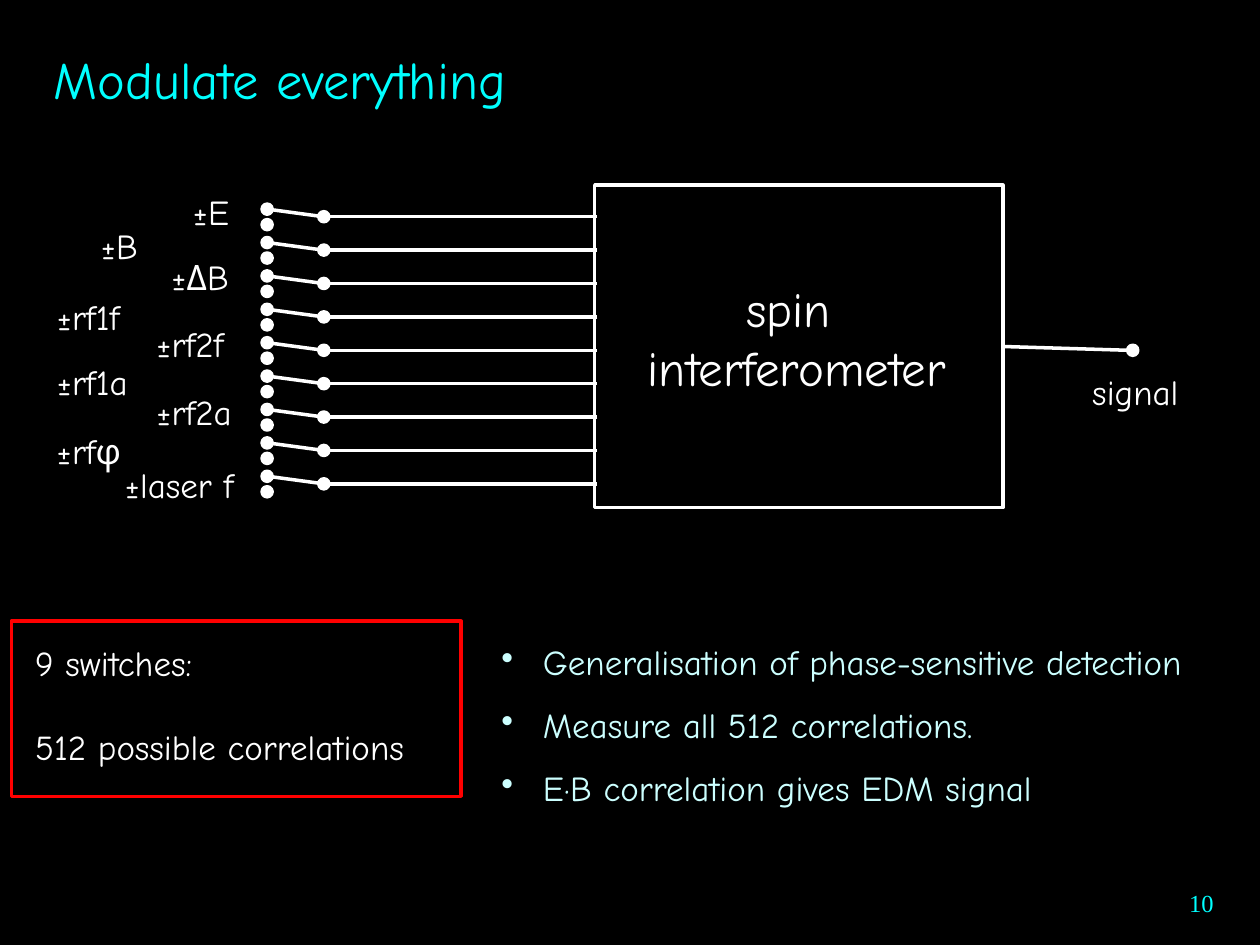
from lxml import etree
from pptx import Presentation
from pptx.dml.color import RGBColor
from pptx.enum.shapes import MSO_CONNECTOR, MSO_SHAPE
from pptx.enum.text import MSO_ANCHOR, MSO_AUTO_SIZE, PP_ALIGN
from pptx.oxml.ns import qn
from pptx.util import Inches, Pt

STRAIGHT = MSO_CONNECTOR.STRAIGHT
OVAL, RECTANGLE = MSO_SHAPE.OVAL, MSO_SHAPE.RECTANGLE
TOP, MIDDLE = MSO_ANCHOR.TOP, MSO_ANCHOR.MIDDLE
GROW, FIXED = MSO_AUTO_SIZE.SHAPE_TO_FIT_TEXT, MSO_AUTO_SIZE.NONE
LEFT, CENTER, RIGHT = PP_ALIGN.LEFT, PP_ALIGN.CENTER, PP_ALIGN.RIGHT

BLACK = RGBColor(0x00, 0x00, 0x00)
WHITE = RGBColor(0xFF, 0xFF, 0xFF)
CYAN = RGBColor(0x00, 0xFF, 0xFF)
PALE_CYAN = RGBColor(0xCC, 0xFF, 0xFF)
RED = RGBColor(0xFF, 0x00, 0x00)

COLUMNS, ROWS = 100, 75
DOT = 0.8
FIRST_SWITCH, SWITCH_PITCH = 17.2, 2.65
SWITCH_COUNT = 9
LABELS = [
    ("±E", 14.3, 14.6, 5.1), ("±B", 7, 17.3, 5.1), ("±ΔB", 12.6, 19.8, 6.9),
    ("±rf1f", 3.5, 23, 8.8), ("±rf2f", 11.4, 25.1, 9.3),
    ("±rf1a", 3.5, 28.1, 8.8), ("±rf2a", 11.4, 30.5, 9.3),
    ("±rfφ", 3.5, 33.6, 7.6), ("±laser f", 8.9, 36.3, 12.1),
    ("signal", 85.7, 28.9, 9.3),
]
POINTS = [
    "Generalisation of phase-sensitive detection",
    "Measure all 512 correlations.",
    "E·B correlation gives EDM signal",
]


def write_text(frame, text, font="Comic Neue", size=20, color=WHITE, align=LEFT,
               line_spacing=None, gap=0, bullet=None, indent=0.33):
    for index, line in enumerate(text.split("\n")):
        para = frame.paragraphs[0] if index == 0 else frame.add_paragraph()
        para.alignment = align
        if line_spacing:
            para.line_spacing = line_spacing
        if index:
            para.space_before = Pt(gap)
        if bullet:
            properties = para._p.get_or_add_pPr()
            properties.set("marL", str(Inches(indent)))
            properties.set("indent", str(-Inches(indent)))
            etree.SubElement(properties, qn("a:buChar")).set("char", bullet)
        span = para.add_run()
        span.text = line
        span.font.name = font
        span.font.size = Pt(size)
        span.font.color.rgb = color


class Diagram:
    """Draws styled elements on one slide, placed by grid columns and rows."""

    def __init__(self, deck, slide, stroke=2):
        self.slide = slide
        self.stroke = Pt(stroke)
        self.column = deck.slide_width / COLUMNS
        self.row = deck.slide_height / ROWS
        slide.background.fill.solid()
        slide.background.fill.fore_color.rgb = BLACK

    def place(self, *lengths):
        return [round(length * (self.row if index % 2 else self.column))
                for index, length in enumerate(lengths)]

    def text(self, text, left, top, width, height, anchor=TOP, wrap=False, **style):
        box = self.slide.shapes.add_textbox(*self.place(left, top, width, height))
        frame = box.text_frame
        frame.word_wrap = wrap
        frame.auto_size = FIXED if wrap else GROW
        frame.vertical_anchor = anchor
        write_text(frame, text, **style)

    def shape(self, kind, left, top, width, height, color=WHITE, filled=False, parent=None):
        shapes = (parent or self.slide).shapes
        shape = shapes.add_shape(kind, *self.place(left, top, width, height))
        shape.shadow.inherit = False
        if filled:
            shape.fill.solid()
            shape.fill.fore_color.rgb = color
        else:
            shape.fill.background()
        shape.line.color.rgb = color
        shape.line.width = self.stroke
        return shape

    def dot(self, left, middle, parent=None):
        return self.shape(OVAL, left, middle - DOT / 2, DOT, DOT, filled=True, parent=parent)

    def line(self, start, end, parent=None):
        shapes = (parent or self.slide).shapes
        line = shapes.add_connector(STRAIGHT, *self.place(*start, *end))
        line.line.color.rgb = WHITE
        line.line.width = self.stroke
        etree.SubElement(line._element.spPr, qn("a:effectLst"))
        return line

    def switch(self, middle):
        group = self.slide.shapes.add_group_shape()
        self.line((47.4, middle), (26.1, middle), group)
        self.dot(25.3, middle, group)
        self.line((25.3, middle - 0.05), (21.6, middle - 0.55), group)
        self.dot(20.8, middle - 0.6, group)
        self.dot(20.8, middle + 0.63, group)


def main():
    deck = Presentation()
    deck.slide_width, deck.slide_height = Inches(10), Inches(7.5)
    diagram = Diagram(deck, deck.slides.add_slide(deck.slide_layouts[6]))

    diagram.text("Modulate everything", 3.3, 0, 47.8, 12.5, anchor=MIDDLE, wrap=True,
                 size=30, color=CYAN)
    diagram.text("\n".join(POINTS), 38.8, 48.7, 61.2, 26.3, wrap=True,
                 color=PALE_CYAN, line_spacing=1.5, bullet="•")

    for index in range(SWITCH_COUNT):
        diagram.switch(FIRST_SWITCH + index * SWITCH_PITCH)
    for label, left, top, width in LABELS:
        diagram.text(label, left, top, width, 4.4)

    diagram.text("spin \ninterferometer", 48.1, 21.6, 30.3, 10.4, size=28, align=CENTER)
    interferometer = diagram.shape(RECTANGLE, 47.2, 14.7, 32.4, 25.6)
    output = diagram.line((89.5, 27.8), (79.6, 27.5))
    output.end_connect(interferometer, 3)
    diagram.dot(89.5, 27.8)

    diagram.text("9 switches:\n512 possible correlations", 1.8, 50.4, 34.7, 11.1, gap=24)
    diagram.shape(RECTANGLE, 0.9, 49.3, 35.7, 13.9, color=RED)
    diagram.text("10", 76.5, 70, 20.8, 5, wrap=True, font="Times New Roman",
                 size=14, color=CYAN, align=RIGHT)
    deck.save("out.pptx")


if __name__ == "__main__":
    main()
